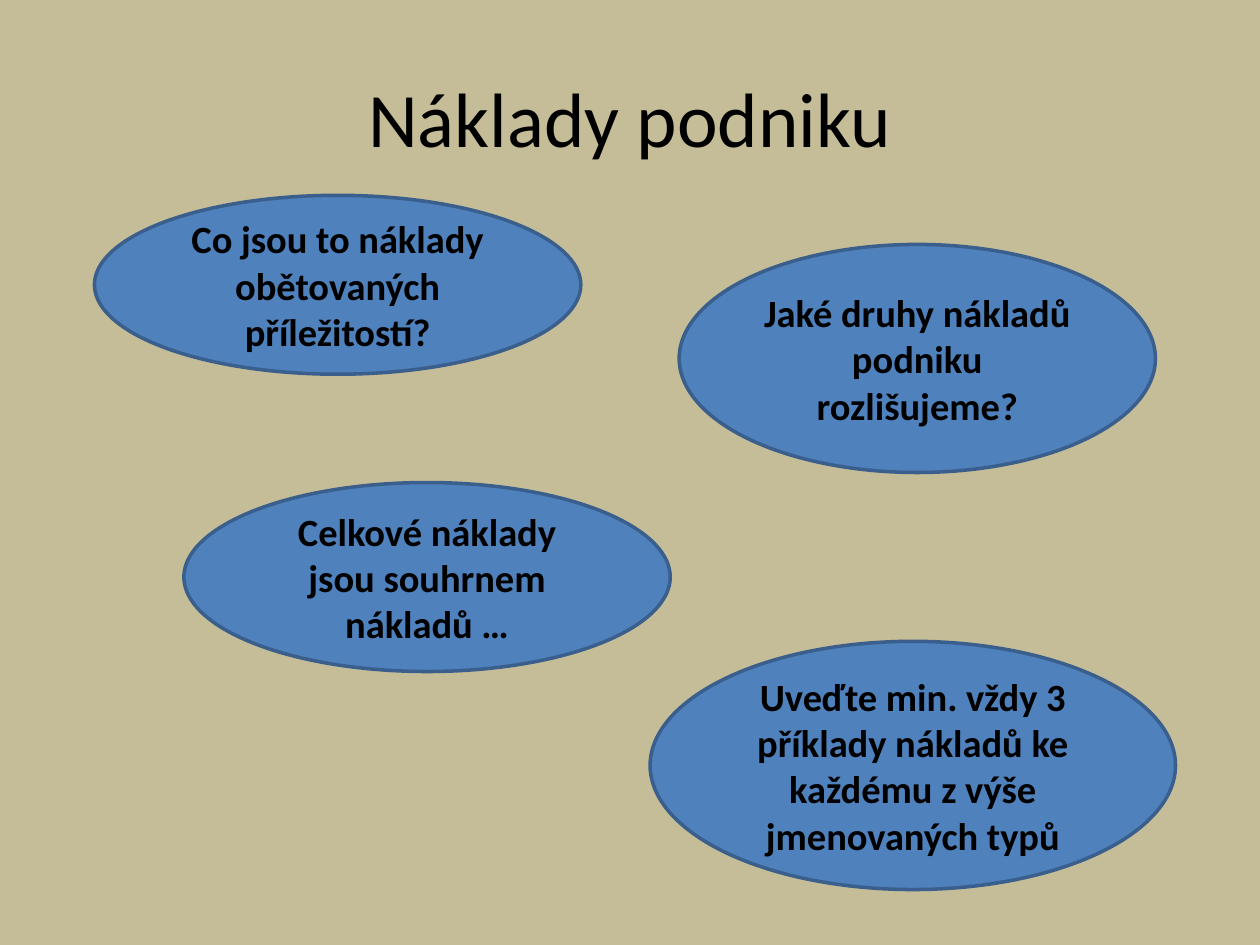
from pptx import Presentation
from pptx.dml.color import RGBColor
from pptx.enum.shapes import MSO_SHAPE
from pptx.enum.text import MSO_ANCHOR, PP_ALIGN
from pptx.util import Inches, Pt

FONT = "Calibri"

# Question text and its ellipse: left, top, width, height in inches
QUESTIONS = [
    ("Co jsou to náklady obětovaných příležitostí?", (0.75, 1.55, 3.86, 1.42)),
    ("Jaké druhy nákladů podniku rozlišujeme?", (5.39, 1.94, 3.78, 1.81)),
    ("Celkové náklady jsou souhrnem nákladů …", (1.46, 3.83, 3.86, 1.5)),
    ("Uveďte min. vždy 3 příklady nákladů ke každému z výše jmenovaných typů",
     (5.16, 5.09, 4.17, 1.97)),
]


def paint(color_format, value):
    color_format.rgb = RGBColor.from_string(value)


def fill_solid(fill, value):
    fill.solid()
    paint(fill.fore_color, value)


def write_text(shape, text, size, bold=False):
    frame = shape.text_frame
    frame.text = text
    frame.word_wrap = True
    frame.vertical_anchor = MSO_ANCHOR.MIDDLE
    para = frame.paragraphs[0]
    para.alignment = PP_ALIGN.CENTER
    para.font.name = FONT
    para.font.size = Pt(size)
    para.font.bold = bold
    paint(para.font.color, "000000")


def set_title(page, text):
    title = page.shapes.title
    title.left, title.top = Inches(0.5), Inches(0.3)
    title.width, title.height = Inches(9), Inches(1.25)
    write_text(title, text, 44)


def add_question(page, text, place):
    bubble = page.shapes.add_shape(MSO_SHAPE.OVAL, *map(Inches, place))
    bubble.shadow.inherit = False
    fill_solid(bubble.fill, "4F81BD")
    paint(bubble.line.color, "3A5F8C")
    bubble.line.width = Pt(2)
    write_text(bubble, text, 22, bold=True)


def main():
    deck = Presentation()
    deck.slide_width, deck.slide_height = Inches(10), Inches(7.5)

    # Title-only page on a sand background
    page = deck.slides.add_slide(deck.slide_layouts[5])
    fill_solid(page.background.fill, "C4BD97")
    set_title(page, "Náklady podniku")

    # Question bubbles
    for text, place in QUESTIONS:
        add_question(page, text, place)

    deck.save("out.pptx")


if __name__ == "__main__":
    main()
